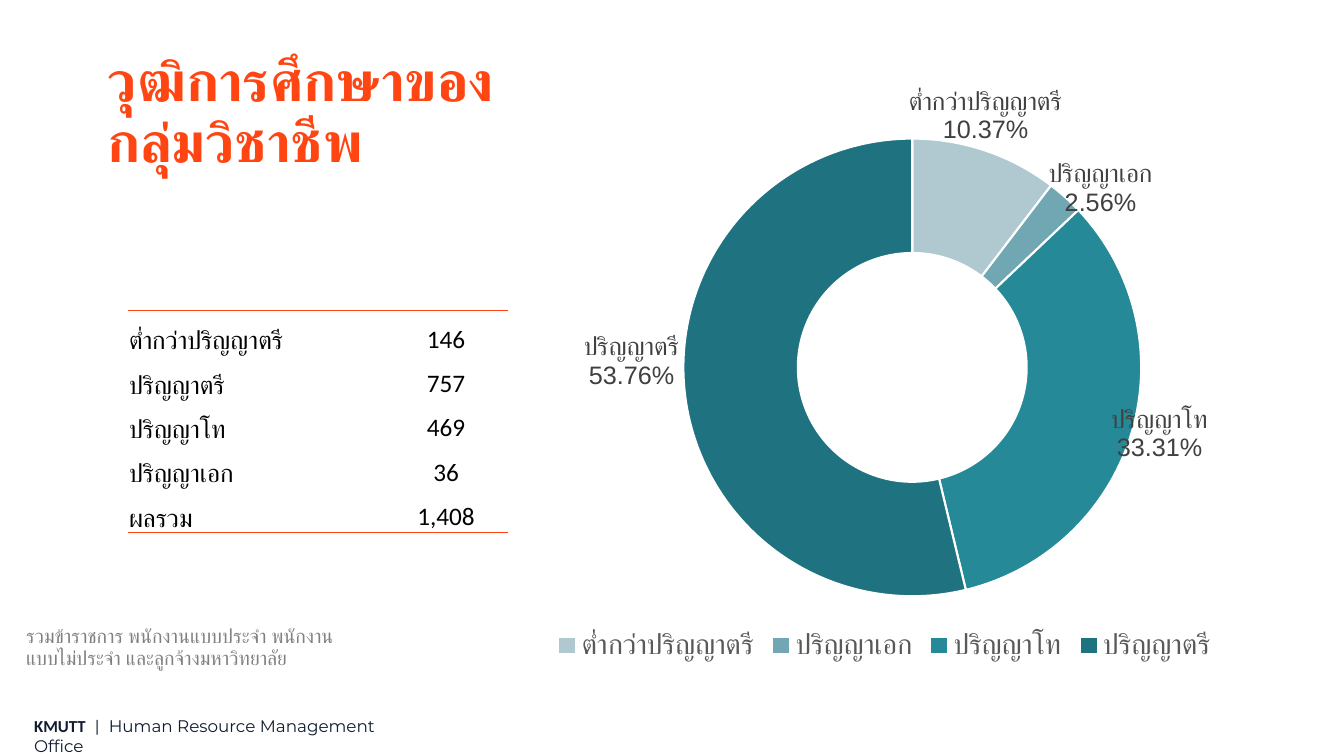
from copy import deepcopy

from pptx import Presentation
from pptx.chart.data import CategoryChartData
from pptx.dml.color import RGBColor
from pptx.enum.chart import XL_CHART_TYPE as CHART, XL_LEGEND_POSITION as LEGEND
from pptx.enum.text import MSO_ANCHOR as ANCHOR, PP_ALIGN as ALIGN
from pptx.oxml import parse_xml
from pptx.oxml.ns import nsdecls, qn
from pptx.util import Inches, Pt

COLORS = {
    "orange": "FF4612", "navy": "111C30", "gray": "808080", "black": "000000",
    "white": "FFFFFF", "label": "404040", "legend": "595959",
}
NO_STYLE = "{2D5ABB26-0587-4C30-8999-92F81FD0307C}"

HEADCOUNT = [
    ("ต่ำกว่าปริญญาตรี", "146"),
    ("ปริญญาตรี", "757"),
    ("ปริญญาโท", "469"),
    ("ปริญญาเอก", "36"),
    ("ผลรวม", "1,408"),
]
# Category, percent, slice colour, label offset as a fraction of the chart
SHARES = [
    ("ต่ำกว่าปริญญาตรี", 10.37, "B0C9D0", (0.02, -0.14)),
    ("ปริญญาเอก", 2.56, "70A7B3", (0.08, -0.08)),
    ("ปริญญาโท", 33.31, "258998", (0.09, 0.03)),
    ("ปริญญาตรี", 53.76, "1F7380", (-0.12, -0.04)),
]


def rgb(name):
    return RGBColor.from_string(COLORS.get(name, name))


def layout_xml(x, y, size=None):
    """Return a manual chart layout; size makes it the inner plot area."""
    parts = []
    if size:
        parts += [("layoutTarget", "inner"), ("xMode", "edge"), ("yMode", "edge")]
    parts += [("x", x), ("y", y)]
    if size:
        parts += zip("wh", size)
    body = "".join(f'<c:{tag} val="{val}"/>' for tag, val in parts)
    return f'<c:layout {nsdecls("c")}><c:manualLayout>{body}</c:manualLayout></c:layout>'


class SlideBuilder:
    def __init__(self, prs, font="Calibri"):
        self.slide = prs.slides.add_slide(prs.slide_layouts[5])
        self.font = font

    def style(self, font, size, color, bold=False, name=None):
        font.name = name or self.font
        font.size = Pt(size)
        font.bold = bold
        font.color.rgb = rgb(color)

    def add_runs(self, tf, runs, spacing=None, align=ALIGN.LEFT):
        """Fill the first paragraph with (text, style options) runs."""
        p = tf.paragraphs[0]
        p.alignment = align
        if spacing:
            p.line_spacing = spacing
        for text, options in runs:
            r = p.add_run()
            r.text = text
            self.style(r.font, **options)

    def title(self, text, box):
        s = self.slide.shapes.title
        s.left, s.top, s.width, s.height = map(Inches, box)
        tf = s.text_frame
        tf.word_wrap = True
        tf.vertical_anchor = ANCHOR.BOTTOM
        self.add_runs(tf, [(text, dict(size=40, color="orange", bold=True))], 0.9)

    def text(self, runs, box, spacing=None):
        tf = self.slide.shapes.add_textbox(*map(Inches, box)).text_frame
        tf.word_wrap = True
        self.add_runs(tf, runs, spacing)

    def border(self, cell, side):
        cell._tc.get_or_add_tcPr().insert(0, parse_xml(
            f'<a:{side} {nsdecls("a")} w="12700"><a:solidFill>'
            f'<a:srgbClr val="{COLORS["orange"]}"/></a:solidFill></a:{side}>'))

    def table(self, rows, box, widths):
        frame = self.slide.shapes.add_table(len(rows), len(widths), *map(Inches, box))
        table = frame.table
        table.first_row = table.horz_banding = False
        table._tbl.tblPr.find(qn("a:tableStyleId")).text = NO_STYLE
        for column, width in zip(table.columns, widths):
            column.width = Inches(width)
        for i, row in enumerate(rows):
            for j, text in enumerate(row):
                cell = table.cell(i, j)
                cell.fill.background()
                cell.vertical_anchor = ANCHOR.BOTTOM
                cell.margin_left = cell.margin_right = cell.margin_top = Inches(0.01)
                cell.margin_bottom = 0
                self.add_runs(cell.text_frame, [(text, dict(size=18, color="black"))],
                              align=ALIGN.CENTER if j else ALIGN.LEFT)
                if i == 0:
                    self.border(cell, "lnT")
                if i == len(rows) - 1:
                    self.border(cell, "lnB")

    def doughnut(self, shares, box):
        data = CategoryChartData()
        data.categories = [share[0] for share in shares]
        data.add_series("Series 1", [share[1] for share in shares])
        chart = self.slide.shapes.add_chart(
            CHART.DOUGHNUT, *map(Inches, box), data).chart
        self.style(chart.font, 10, "black", name="Arial")
        chart.has_title = False
        chart.has_legend = True
        chart.legend.position = LEGEND.BOTTOM
        chart.legend.include_in_layout = False
        self.style(chart.legend.font, 20, "legend", name="Arial")

        plot = chart.plots[0]
        plot.vary_by_categories = True
        plot._element.find(qn("c:holeSize")).set("val", "75")
        area = plot._element.getparent()
        for old in area.findall(qn("c:layout")):
            area.remove(old)
        area.insert(0, parse_xml(layout_xml(0.28, 0.16, (0.5, 0.73))))

        series = plot.series[0]
        for i, share in enumerate(shares):
            fmt = series.points[i].format
            fmt.fill.solid()
            fmt.fill.fore_color.rgb = rgb(share[2])
            fmt.line.color.rgb = rgb("white")
            fmt.line.width = Pt(1.5)
        self.slice_labels(series, [share[3] for share in shares])

    def slice_labels(self, series, offsets):
        """Show category over percent, each label shifted by its offset."""
        labels = series.data_labels
        self.style(labels.font, 18, "label", name="Arial")
        labels.number_format = "0.00%"
        labels.number_format_is_linked = False
        labels.show_value = False
        labels.show_category_name = labels.show_percentage = True
        group = labels._element
        for leader in group.findall(qn("c:showLeaderLines")):
            group.remove(leader)
        group.append(parse_xml(f'<c:separator {nsdecls("c")}>\n</c:separator>'))
        shared = list(group)
        for i, offset in enumerate(offsets):
            label = parse_xml(f'<c:dLbl {nsdecls("c")}><c:idx val="{i}"/></c:dLbl>')
            label.append(parse_xml(layout_xml(*offset)))
            label.extend(deepcopy(part) for part in shared)
            group.insert(i, label)


def main():
    prs = Presentation()
    prs.slide_width, prs.slide_height = Inches(13.33), Inches(7.5)
    s = SlideBuilder(prs)
    s.text([
        ("KMUTT", dict(size=12, color="navy", bold=True)),
        ("  |  ", dict(size=12, color="navy")),
        ("Human Resource Management Office",
         dict(size=12, color="navy", name="Montserrat")),
    ], (0.24, 7.05, 3.62, 0.3))
    s.table(HEADCOUNT, (1.27, 3.08, 3.77, 2.2), (2.54, 1.23))
    s.title("วุฒิการศึกษาของกลุ่มวิชาชีพ", (0.97, 0, 4.08, 1.78))
    s.text([("รวมข้าราชการ พนักงานแบบประจำ พนักงานแบบไม่ประจำ และลูกจ้างมหาวิทยาลัย",
             dict(size=14, color="gray"))], (0.16, 6.17, 3.46, 0.43), 0.9)
    s.doughnut(SHARES, (4.22, 0.38, 9.11, 6.22))
    prs.save("out.pptx")


if __name__ == "__main__":
    main()
